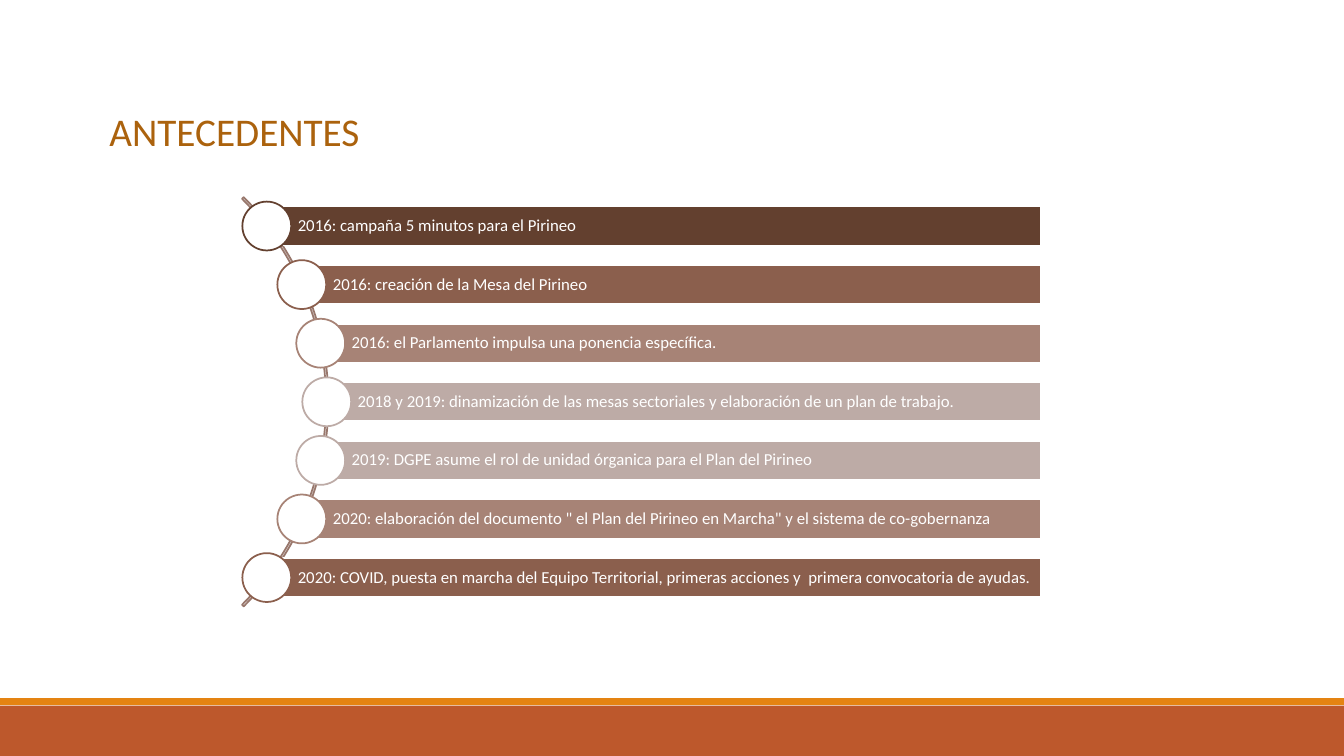
from math import sqrt

from pptx import Presentation
from pptx.dml.color import RGBColor
from pptx.enum.shapes import MSO_SHAPE
from pptx.enum.text import MSO_ANCHOR, MSO_AUTO_SIZE, PP_ALIGN
from pptx.util import Pt

COLOURS = {
    "white": "FFFFFF",
    "title": "AB620D",
    "arc": "98776C",
    "footer": "BD582C",
    "stripe": "E48312",
    "brown": "63402F",
    "chestnut": "8B5F4D",
    "clay": "A78376",
    "sand": "BDABA6",
}

MILESTONES = [
    ("brown", "2016: campaña 5 minutos para el Pirineo"),
    ("chestnut", "2016: creación de la Mesa del Pirineo"),
    ("clay", "2016: el Parlamento impulsa una ponencia específica."),
    ("sand", "2018 y 2019: dinamización de las mesas sectoriales y elaboración de un plan de trabajo."),
    ("sand", "2019: DGPE asume el rol de unidad órganica para el Plan del Pirineo"),
    ("clay", "2020: elaboración del documento \" el Plan del Pirineo en Marcha\" y el sistema de co-gobernanza"),
    ("chestnut", "2020: COVID, puesta en marcha del Equipo Territorial, primeras acciones y  primera convocatoria de ayudas."),
]

# Timeline geometry, in points: the circles sit on an arc round one centre
CENTRE_X, CENTRE_Y = 28, 287
RADIUS = 205.4
ARC_SIZE = 413.3
STEP = 41.85
BAR_HEIGHT, BAR_RIGHT = 27.9, 743.4
CIRCLE = 34.9


class SlideBuilder:
    """Holds the style and the current slide."""

    font = "Calibri"
    line_width = 1.25

    def __init__(self, page):
        self.page = page

    def colour(self, name):
        return RGBColor.from_string(COLOURS[name])

    def add_text(self, frame, text, size, colour):
        para = frame.paragraphs[0]
        para.alignment = PP_ALIGN.LEFT
        span = para.add_run()
        span.text = text
        span.font.name = self.font
        span.font.size = Pt(size)
        span.font.color.rgb = self.colour(colour)

    def title(self, text, left, top, width, height):
        box = self.page.shapes.title
        box.left, box.top, box.width, box.height = map(Pt, (left, top, width, height))
        frame = box.text_frame
        frame.word_wrap = False
        frame.auto_size = MSO_AUTO_SIZE.SHAPE_TO_FIT_TEXT
        frame.vertical_anchor = MSO_ANCHOR.TOP
        self.add_text(frame, text, 28, "title")

    def shape(self, kind, left, top, width, height, fill=None, line=None):
        box = self.page.shapes.add_shape(kind, *map(Pt, (left, top, width, height)))
        box.shadow.inherit = False
        if fill:
            box.fill.solid()
            box.fill.fore_color.rgb = self.colour(fill)
        else:
            box.fill.background()
        if line:
            box.line.color.rgb = self.colour(line)
            box.line.width = Pt(self.line_width)
        else:
            box.line.fill.background()
        return box

    def arc(self, centre_x, centre_y, size):
        box = self.shape(MSO_SHAPE.BLOCK_ARC, centre_x - size / 2, centre_y - size / 2,
                         size, size, line="arc")
        for index, value in enumerate((189, 27, 0.004)):
            box.adjustments[index] = value

    def milestone(self, text, colour, x, y):
        bar = self.shape(MSO_SHAPE.RECTANGLE, x, y - BAR_HEIGHT / 2,
                         BAR_RIGHT - x, BAR_HEIGHT, colour, "white")
        frame = bar.text_frame
        frame.word_wrap = True
        frame.vertical_anchor = MSO_ANCHOR.MIDDLE
        frame.margin_left = Pt(22.1)
        frame.margin_top = frame.margin_right = frame.margin_bottom = Pt(2.4)
        frame.paragraphs[0].line_spacing = 0.9
        self.add_text(frame, text, 12, "white")
        self.shape(MSO_SHAPE.OVAL, x - CIRCLE / 2, y - CIRCLE / 2,
                   CIRCLE, CIRCLE, "white", colour)


def main():
    deck = Presentation()
    deck.slide_width, deck.slide_height = Pt(960), Pt(540)
    builder = SlideBuilder(deck.slides.add_slide(deck.slide_layouts[5]))

    # Footer bands
    builder.shape(MSO_SHAPE.RECTANGLE, 0, 504, 960, 36, "footer")
    builder.shape(MSO_SHAPE.RECTANGLE, 0, 498.7, 960, 5, "stripe")

    # Title
    builder.title("ANTECEDENTES", 71, 73.4, 195, 41)

    # Timeline
    builder.arc(CENTRE_X, CENTRE_Y, ARC_SIZE)
    middle = (len(MILESTONES) - 1) / 2
    for index, (colour, text) in enumerate(MILESTONES):
        offset = (index - middle) * STEP
        x = CENTRE_X + sqrt(RADIUS ** 2 - offset ** 2)
        builder.milestone(text, colour, x, CENTRE_Y + offset)

    deck.save("out.pptx")


if __name__ == "__main__":
    main()
